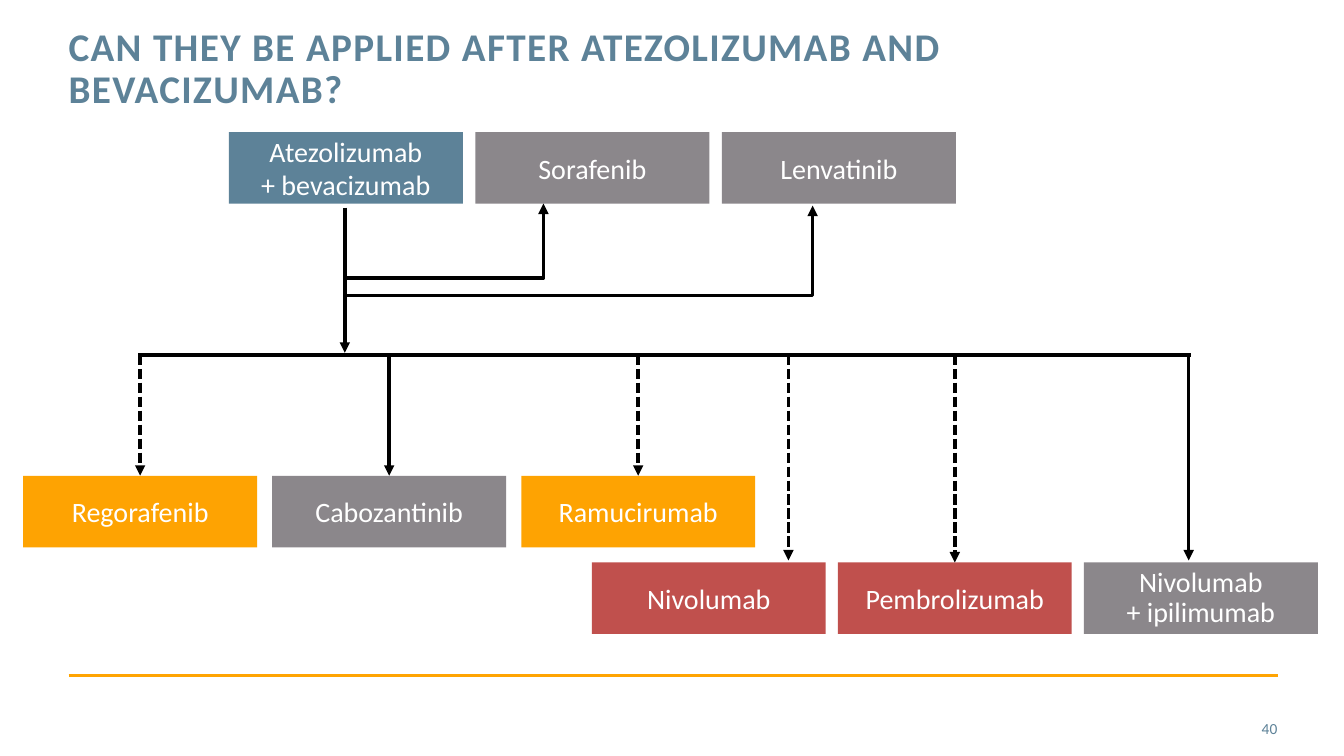
from dataclasses import dataclass

from lxml.etree import SubElement
from pptx import Presentation
from pptx.dml.color import RGBColor
from pptx.enum.dml import MSO_LINE
from pptx.enum.shapes import MSO_CONNECTOR, MSO_SHAPE
from pptx.enum.text import MSO_ANCHOR, MSO_AUTO_SIZE, PP_ALIGN
from pptx.oxml.ns import qn
from pptx.util import Inches, Pt


@dataclass(frozen=True)
class Theme:
    font: str = "Calibri"
    blue: str = "5D8298"
    grey: str = "8B878B"
    amber: str = "FEA302"
    red: str = "C0504D"
    rule: str = "FFA402"
    black: str = "000000"
    white: str = "FFFFFF"
    title_size: int = 28
    box_size: int = 20
    number_size: int = 11
    line_width: float = 2.5
    rule_width: float = 2


THEME = Theme()

# Grid: every drug box has one size; each row has a left edge, top and column step
BOX_WIDTH, BOX_HEIGHT = 2.32, 0.71
ROWS = {"first": (2.27, 1.31, 2.445), "second": (0.23, 4.72, 2.47), "third": (5.87, 5.58, 2.44)}
MARGIN, RIGHT_EDGE = 0.68, 12.68
TRUNK_X, BUS_Y = 3.42, 3.52

# Row, column, drug, colour, line spacing
DRUGS = [
    ("first", 0, "Atezolizumab\n+ bevacizumab", THEME.blue, 1.0),
    ("first", 1, "Sorafenib", THEME.grey, 1.0),
    ("first", 2, "Lenvatinib", THEME.grey, 1.0),
    ("second", 0, "Regorafenib", THEME.amber, 1.0),
    ("second", 1, "Cabozantinib", THEME.grey, 1.0),
    ("second", 2, "Ramucirumab", THEME.amber, 1.0),
    ("third", 0, "Nivolumab", THEME.red, 1.0),
    ("third", 1, "Pembrolizumab", THEME.red, 1.0),
    ("third", 2, "Nivolumab\n+ ipilimumab", THEME.grey, 0.9),
]

# Row, column, dashed, and the x of an arrow that lands off the box's middle
BRANCHES = [
    ("second", 0, True, None),
    ("second", 1, False, None),
    ("second", 2, True, None),
    ("third", 0, True, 7.82),
    ("third", 1, True, None),
    ("third", 2, False, 11.79),
]

# Height of the turn, end x, end y
ELBOWS = [(2.76, 5.39, 2.02), (2.93, 8.06, 2.04)]


def apply(target, formats):
    for name, value in formats.items():
        setattr(target, name, value)


def write(shape, text, size, color, para_format, anchor=MSO_ANCHOR.MIDDLE, bold=False):
    frame = shape.text_frame
    apply(frame, {"word_wrap": True, "auto_size": MSO_AUTO_SIZE.NONE, "vertical_anchor": anchor,
                  "margin_left": 0, "margin_right": 0, "margin_top": 0, "margin_bottom": 0})
    para = frame.paragraphs[0]
    para.text = text
    apply(para, para_format)
    for span in para.runs:
        apply(span.font, {"name": THEME.font, "size": Pt(size), "bold": bold})
        span.font.color.rgb = RGBColor.from_string(color)
    return para


def place(shape, left, top, width, height):
    apply(shape, {"left": Inches(left), "top": Inches(top),
                  "width": Inches(width), "height": Inches(height)})


def style_line(shape, color=THEME.black, width=THEME.line_width, dashed=False, arrow=False):
    line = shape.line
    line.color.rgb = RGBColor.from_string(color)
    line.width = Pt(width)
    if dashed:
        line.dash_style = MSO_LINE.SQUARE_DOT
    if arrow:
        SubElement(line._get_or_add_ln(), qn("a:tailEnd"), type="triangle")


def add_title(page, text):
    title = page.shapes.title
    place(title, MARGIN, 0.27, 9.56, 0.88)
    para = write(title, text, THEME.title_size, THEME.blue,
                 {"alignment": PP_ALIGN.LEFT, "line_spacing": Pt(30)}, MSO_ANCHOR.TOP, True)
    for span in para.runs:
        span._r.get_or_add_rPr().set("spc", "100")


def add_page_number(page, text):
    box = page.shapes.add_textbox(0, 0, 0, 0)
    place(box, 11.81, 7.03, 0.86, 0.4)
    write(box, text, THEME.number_size, THEME.blue, {"alignment": PP_ALIGN.RIGHT})


def add_drug(page, row, column, text, color, spacing):
    left, top, step = ROWS[row]
    box = page.shapes.add_shape(MSO_SHAPE.RECTANGLE, 0, 0, 0, 0)
    place(box, left + column * step, top, BOX_WIDTH, BOX_HEIGHT)
    box.shadow.inherit = False
    box.fill.solid()
    box.fill.fore_color.rgb = RGBColor.from_string(color)
    box.line.fill.background()
    write(box, text, THEME.box_size, THEME.white,
          {"alignment": PP_ALIGN.CENTER, "line_spacing": spacing})
    return box


def add_line(page, start, end, **style):
    ends = [Inches(value) for value in (*start, *end)]
    line = page.shapes.add_connector(MSO_CONNECTOR.STRAIGHT, *ends)
    style_line(line, **style)
    SubElement(line._element.spPr, qn("a:effectLst"))
    return line


def add_branch(page, boxes, row, column, dashed, x):
    left, top, step = ROWS[row]
    middle = left + column * step + BOX_WIDTH / 2
    end = (x or middle, top - 0.02)
    line = add_line(page, (end[0], BUS_Y), end, dashed=dashed, arrow=True)
    if x is None:
        line.end_connect(boxes[row, column], 0)


def add_elbow(page, turn_y, end_x, end_y):
    points = [(Inches(x), Inches(y)) for x, y in ((TRUNK_X, turn_y), (end_x, turn_y), (end_x, end_y))]
    builder = page.shapes.build_freeform(*points[0])
    builder.add_line_segments(points[1:], close=False)
    elbow = builder.convert_to_shape()
    elbow.shadow.inherit = False
    elbow.fill.background()
    style_line(elbow, arrow=True)


def main():
    deck = Presentation()
    apply(deck, {"slide_width": Inches(13.33), "slide_height": Inches(7.5)})
    page = deck.slides.add_slide(deck.slide_layouts[5])

    # Title, footer rule and page number
    add_title(page, "CAN THEY BE APPLIED AFTER ATEZOLIZUMAB AND BEVACIZUMAB?")
    add_line(page, (MARGIN, 6.7), (RIGHT_EDGE, 6.7), color=THEME.rule, width=THEME.rule_width)
    add_page_number(page, "40")

    # Drug boxes
    boxes = {drug[:2]: add_drug(page, *drug) for drug in DRUGS}

    # Trunk from the first treatment, with elbows to the alternatives
    add_line(page, (TRUNK_X, 2.06), (TRUNK_X, 3.5), arrow=True)
    for elbow in ELBOWS:
        add_elbow(page, *elbow)

    # Horizontal bus and its branches
    add_line(page, (1.37, BUS_Y), (11.81, BUS_Y))
    for branch in BRANCHES:
        add_branch(page, boxes, *branch)

    deck.save("out.pptx")


if __name__ == "__main__":
    main()
